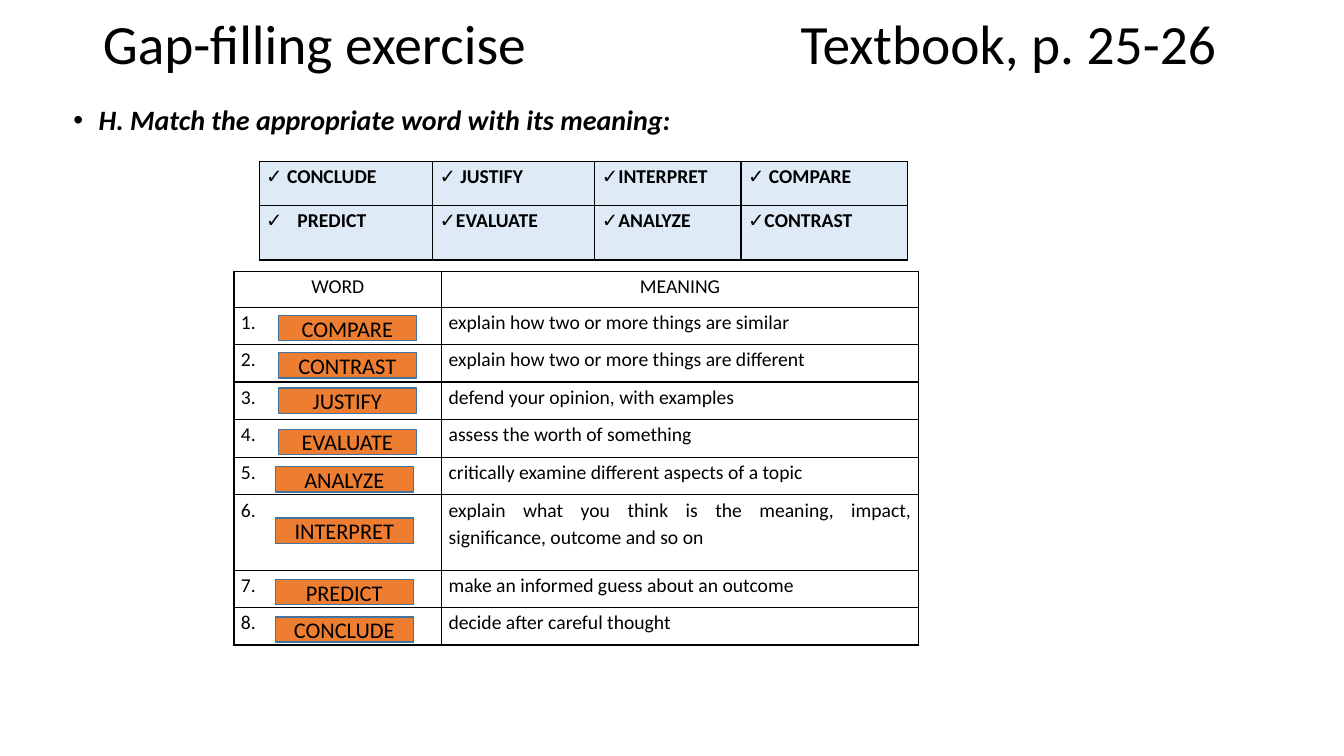
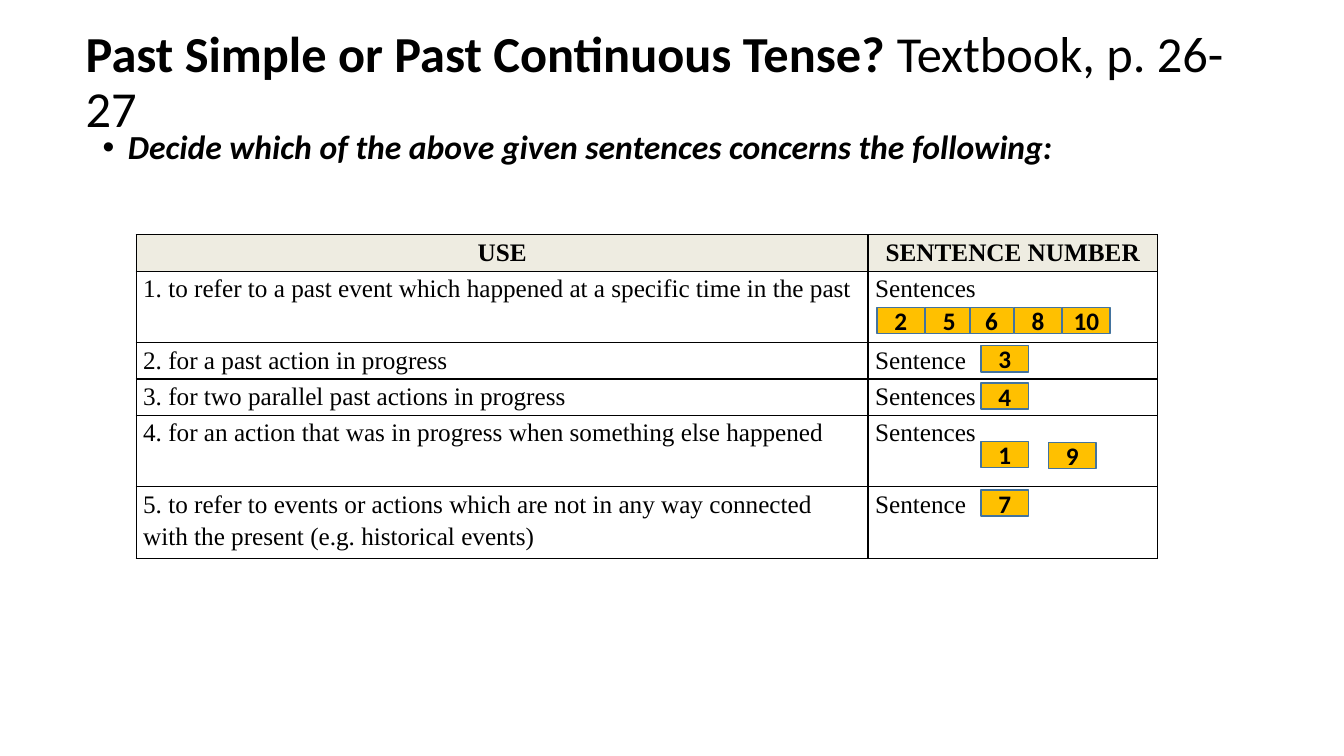
import pptx
import pptx.dml.color
import pptx.enum.shapes
import pptx.enum.text
import pptx.oxml
import pptx.oxml.ns
import pptx.util
from lxml import etree

Inches = pptx.util.Inches
Pt = pptx.util.Pt
Align = pptx.enum.text.PP_ALIGN
Anchor = pptx.enum.text.MSO_ANCHOR
qn = pptx.oxml.ns.qn

BLACK = "000000"
CHIP_LINE = "43739E"
BODY_FONT = "Calibri"
TABLE_SERIF = "Times New Roman"


def color(value):
    return pptx.dml.color.RGBColor.from_string(value)


def add_bullet(para, character, indent):
    properties = para._p.get_or_add_pPr()
    properties.set("marL", str(Inches(indent)))
    properties.set("indent", str(-Inches(indent)))
    etree.SubElement(properties, qn("a:buFont")).set("typeface", "Arial")
    etree.SubElement(properties, qn("a:buChar")).set("char", character)


word_bank = {
    "at": (2.57, 1.6), "columns": [1.72, 1.61, 1.45, 1.65], "rows": [0.44, 0.54],
    "cells": [
        ["✓ CONCLUDE", "✓ JUSTIFY", "✓INTERPRET", "✓ COMPARE"],
        ["PREDICT", "✓EVALUATE", "✓ANALYZE", "✓CONTRAST"],
    ],
    "header": False, "fills": ["DEEBF7", "DEEBF7"], "bold_rows": 2,
    "align": Align.JUSTIFY, "font": BODY_FONT, "size": 14, "bullets": {"PREDICT": ("✓", 0.31)},
}

meanings = {
    "at": (2.32, 2.69), "columns": [2.06, 4.73],
    "rows": [0.36, 0.37, 0.37, 0.37, 0.38, 0.37, 0.75, 0.37, 0.37],
    "cells": [
        ["WORD", "MEANING"],
        ["1.", "explain how two or more things are similar"],
        ["2.", "explain how two or more things are different"],
        ["3.", "defend your opinion, with examples"],
        ["4.", "assess the worth of something"],
        ["5.", "critically examine different aspects of a topic"],
        ["6.", "explain what you think is the meaning, impact, significance, outcome and so on"],
        ["7.", "make an informed guess about an outcome"],
        ["8.", "decide after careful thought"],
    ],
    "header": True, "fills": [], "bold_rows": 0,
    "align": Align.JUSTIFY, "font": BODY_FONT, "size": 14, "bullets": {},
}

tense_uses = {
    "at": (1.35, 2.33), "columns": [7.26, 2.87],
    "rows": [0.36, 0.71, 0.36, 0.36, 0.71, 0.71],
    "cells": [
        ["USE", "SENTENCE NUMBER"],
        ["1. to refer to a past event which happened at a specific time in the past", "Sentences"],
        ["2. for a past action in progress", "Sentence"],
        ["3. for two parallel past actions in progress", "Sentences"],
        ["4. for an action that was in progress when something else happened", "Sentences"],
        ["5. to refer to events or actions which are not in any way connected "
         "with the present (e.g. historical events)", "Sentence"],
    ],
    "header": True, "fills": ["EEECE1"], "bold_rows": 1,
    "align": Align.LEFT, "font": TABLE_SERIF, "size": 18, "bullets": {},
}

pages = [
    {
        "title": [("Gap-filling exercise\tTextbook, p. 25-26", False)],
        "title_at": (0.92, 0.15, 11.5, 0.63), "title_size": 39.6, "tab": 6.92,
        "task": "H. Match the appropriate word with its meaning:",
        "task_at": (0.63, 1.01), "task_size": 20,
        "tables": [word_bank, meanings],
        "chip_fill": "ED7D31", "chip_height": 0.25, "chip_size": 16, "chip_bold": False,
        "chips": [
            ("COMPARE", 2.76, 3.13, 1.37), ("CONTRAST", 2.76, 3.5, 1.37),
            ("JUSTIFY", 2.76, 3.85, 1.37), ("EVALUATE", 2.76, 4.26, 1.37),
            ("ANALYZE", 2.73, 4.63, 1.37), ("INTERPRET", 2.73, 5.14, 1.37),
            ("PREDICT", 2.73, 5.75, 1.37), ("CONCLUDE", 2.73, 6.12, 1.37),
        ],
    },
    {
        "title": [("Past Simple or Past Continuous Tense? ", True), ("Textbook, p. 26-27", False)],
        "title_at": (0.75, 0.4, 11.99, 0.86), "title_size": 36, "tab": None,
        "task": "Decide which of the above given sentences concerns the following:",
        "task_at": (0.92, 1.25), "task_size": 24,
        "tables": [tense_uses],
        "chip_fill": "FFC000", "chip_height": 0.26, "chip_size": 18, "chip_bold": True,
        "chips": [
            ("2", 8.7, 3.05, 0.47), ("5", 9.18, 3.05, 0.47), ("6", 9.62, 3.05, 0.43),
            ("8", 10.06, 3.05, 0.47), ("10", 10.54, 3.05, 0.47),
            ("3", 9.73, 3.43, 0.47), ("4", 9.73, 3.8, 0.47),
            ("1", 9.73, 4.38, 0.47), ("9", 10.4, 4.39, 0.47), ("7", 9.73, 4.86, 0.47),
        ],
    },
]

deck = pptx.Presentation()
deck.slide_width = Inches(13.33)
deck.slide_height = Inches(7.5)
title_only = deck.slide_layouts[5]

for content in pages:
    page = deck.slides.add_slide(title_only)

    title = page.shapes.title
    title.left, title.top, title.width, title.height = map(Inches, content["title_at"])
    title.text_frame.auto_size = pptx.enum.text.MSO_AUTO_SIZE.NONE
    title.text_frame.vertical_anchor = Anchor.MIDDLE
    para = title.text_frame.paragraphs[0]
    para.alignment = Align.LEFT
    para.line_spacing = 0.9
    if content["tab"]:
        tabs = etree.SubElement(para._p.get_or_add_pPr(), qn("a:tabLst"))
        etree.SubElement(tabs, qn("a:tab"), pos=str(Inches(content["tab"])), algn="l")
    for words, bold in content["title"]:
        span = para.add_run()
        span.text = words
        span.font.name = BODY_FONT
        span.font.size = Pt(content["title_size"])
        span.font.bold = bold
        span.font.color.rgb = color(BLACK)

    left, top = content["task_at"]
    box = page.shapes.add_textbox(Inches(left), Inches(top), Inches(11.5), Inches(0.5))
    box.text_frame.word_wrap = True
    para = box.text_frame.paragraphs[0]
    para.text = content["task"]
    para.line_spacing = 0.9
    add_bullet(para, "•", 0.25)
    font = para.runs[0].font
    font.name = BODY_FONT
    font.size = Pt(content["task_size"])
    font.bold = font.italic = True
    font.color.rgb = color(BLACK)

    for data in content["tables"]:
        left, top = data["at"]
        frame = page.shapes.add_table(
            len(data["rows"]), len(data["columns"]), Inches(left), Inches(top),
            Inches(sum(data["columns"])), Inches(sum(data["rows"])))
        table = frame.table
        table.first_row = table.horz_banding = False
        for column, width in zip(table.columns, data["columns"]):
            column.width = Inches(width)
        for row_index, (row, height) in enumerate(zip(table.rows, data["rows"])):
            row.height = Inches(height)
            for cell, words in zip(row.cells, data["cells"][row_index]):
                cell.margin_left = cell.margin_right = Inches(0.07)
                cell.margin_top = cell.margin_bottom = 0
                if row_index < len(data["fills"]):
                    cell.fill.solid()
                    cell.fill.fore_color.rgb = color(data["fills"][row_index])
                else:
                    cell.fill.background()
                for position, side in enumerate(["lnL", "lnR", "lnT", "lnB"]):
                    border = etree.Element(qn("a:" + side), w=str(Pt(1)))
                    paint = etree.SubElement(border, qn("a:solidFill"))
                    etree.SubElement(paint, qn("a:srgbClr"), val=BLACK)
                    cell._tc.get_or_add_tcPr().insert(position, border)
                para = cell.text_frame.paragraphs[0]
                para.text = words
                para.line_spacing = 1.15
                is_header = data["header"] and row_index == 0
                para.alignment = Align.CENTER if is_header else data["align"]
                if words in data["bullets"]:
                    add_bullet(para, *data["bullets"][words])
                font = para.runs[0].font
                font.name = data["font"]
                font.size = Pt(data["size"])
                font.bold = row_index < data["bold_rows"]
                font.color.rgb = color(BLACK)

    for words, left, top, width in content["chips"]:
        chip = page.shapes.add_shape(
            pptx.enum.shapes.MSO_SHAPE.RECTANGLE, Inches(left), Inches(top),
            Inches(width), Inches(content["chip_height"]))
        chip.shadow.inherit = False
        chip.fill.solid()
        chip.fill.fore_color.rgb = color(content["chip_fill"])
        chip.line.color.rgb = color(CHIP_LINE)
        chip.line.width = Pt(1)
        chip.text_frame.vertical_anchor = Anchor.MIDDLE
        para = chip.text_frame.paragraphs[0]
        para.text = words
        para.alignment = Align.CENTER
        font = para.runs[0].font
        font.name = BODY_FONT
        font.size = Pt(content["chip_size"])
        font.bold = content["chip_bold"]
        font.color.rgb = color(BLACK)

deck.save("out.pptx")
